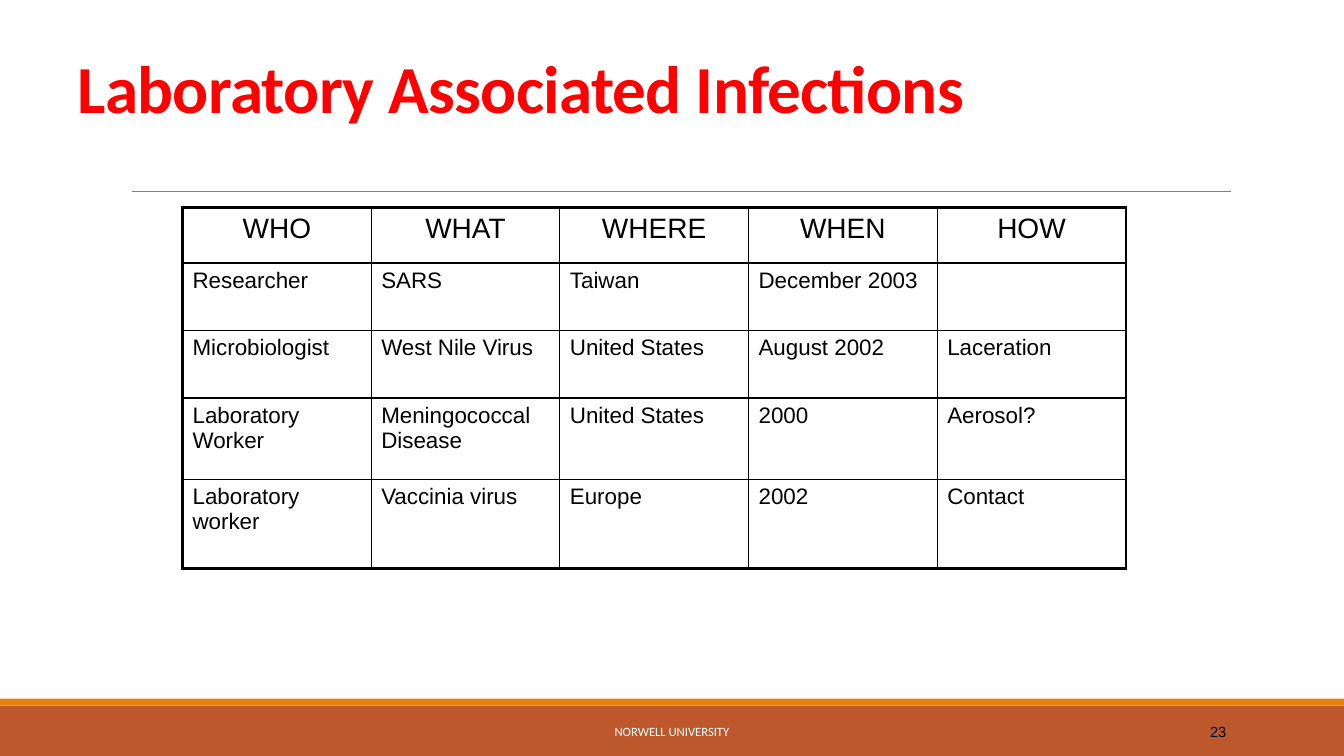
from lxml import etree
from pptx import Presentation
from pptx import util as u
from pptx.dml.color import RGBColor
from pptx.enum import shapes, text
from pptx.oxml.ns import qn

BLACK = RGBColor(0x00, 0x00, 0x00)
WHITE = RGBColor(0xFF, 0xFF, 0xFF)
RED = RGBColor(0xFF, 0x00, 0x00)
GREY = RGBColor(0x80, 0x80, 0x80)
RUST = RGBColor(0xBD, 0x58, 0x2C)
ORANGE = RGBColor(0xE4, 0x83, 0x12)

INFECTIONS = [
    ["WHO", "WHAT", "WHERE", "WHEN", "HOW"],
    ["Researcher", "SARS", "Taiwan", "December 2003", ""],
    ["Microbiologist", "West Nile Virus", "United States", "August 2002", "Laceration"],
    ["Laboratory Worker", "Meningococcal Disease", "United States", "2000", "Aerosol?"],
    ["Laboratory worker", "Vaccinia virus", "Europe", "2002", "Contact"],
]


class SlideBuilder:
    heading_font = "Calibri"
    body_font = "Arial"
    outer_border = 2.25
    inner_border = 1

    def __init__(self, presentation):
        self.width = presentation.slide_width
        self.height = presentation.slide_height
        self.slide = presentation.slides.add_slide(presentation.slide_layouts[6])

    def x(self, percent):
        return round(self.width * percent / 100)

    def y(self, percent):
        return round(self.height * percent / 100)

    def box(self, left, top, width, height):
        return self.x(left), self.y(top), self.x(width), self.y(height)

    def bar(self, area, color):
        shape = self.slide.shapes.add_shape(shapes.MSO_SHAPE.RECTANGLE, *self.box(*area))
        shape.shadow.inherit = False
        shape.fill.solid()
        shape.fill.fore_color.rgb = color
        shape.line.fill.background()

    def rule(self, left, right, top, color, weight):
        connector = self.slide.shapes.add_connector(
            shapes.MSO_CONNECTOR.STRAIGHT, self.x(left), self.y(top), self.x(right), self.y(top))
        connector.line.color.rgb = color
        connector.line.width = u.Pt(weight)
        etree.SubElement(connector._element.spPr, qn("a:effectLst"))

    def run(self, paragraph, wording, size, font, color, bold=False):
        run = paragraph.add_run()
        run.text = wording
        run.font.size = u.Pt(size)
        run.font.name = font
        run.font.bold = bold
        run.font.color.rgb = color
        return run

    def label(self, area, wording, size, font, color, align, bold=False, line_spacing=1, tracking=0):
        frame = self.slide.shapes.add_textbox(*self.box(*area)).text_frame
        frame.word_wrap = True
        frame.vertical_anchor = text.MSO_ANCHOR.MIDDLE
        paragraph = frame.paragraphs[0]
        paragraph.alignment = align
        paragraph.line_spacing = line_spacing
        run = self.run(paragraph, wording, size, font, color, bold)
        if tracking:
            run.font._element.set("spc", str(round(tracking * 100)))

    def borders(self, cell, weights):
        properties = cell._tc.get_or_add_tcPr()
        for position, (side, weight) in enumerate(weights.items()):
            line = etree.Element(qn(f"a:ln{side}"), w=str(u.Pt(weight)))
            fill = etree.SubElement(line, qn("a:solidFill"))
            etree.SubElement(fill, qn("a:srgbClr"), val=str(BLACK))
            properties.insert(position, line)

    def table(self, left, top, column_width, row_heights, rows):
        last_row, last_column = len(rows) - 1, len(rows[0]) - 1
        area = self.box(left, top, column_width * len(rows[0]), sum(row_heights))
        table = self.slide.shapes.add_table(len(rows), len(rows[0]), *area).table
        table.first_row = table.horz_banding = False
        for column in table.columns:
            column.width = self.x(column_width)
        for row, height in zip(table.rows, row_heights):
            row.height = self.y(height)
        for row_index, row in enumerate(rows):
            for column_index, wording in enumerate(row):
                cell = table.cell(row_index, column_index)
                cell.fill.background()
                edges = {"L": column_index == 0, "R": column_index == last_column,
                         "T": row_index == 0, "B": row_index == last_row}
                self.borders(cell, {side: self.outer_border if outer else self.inner_border
                                    for side, outer in edges.items()})
                paragraph = cell.text_frame.paragraphs[0]
                is_header = row_index == 0
                paragraph.alignment = text.PP_ALIGN.CENTER if is_header else text.PP_ALIGN.LEFT
                if wording:
                    self.run(paragraph, wording, 20 if is_header else 16, self.body_font, BLACK)


def main():
    presentation = Presentation()
    presentation.slide_width = u.Inches(13.33)
    presentation.slide_height = u.Inches(7.5)
    builder = SlideBuilder(presentation)
    builder.bar((0, 93.33, 100, 6.67), RUST)
    builder.bar((0, 92.4, 100, 0.93), ORANGE)
    builder.rule(9.83, 91.6, 25.3, GREY, 0.5)
    builder.label((5.03, 4, 90, 16.67), "Laboratory Associated Infections", 48,
                  builder.heading_font, RED, text.PP_ALIGN.LEFT,
                  bold=True, line_spacing=0.85, tracking=-0.5)
    builder.table(13.58, 27.47, 14.04, [7.33, 8.93, 8.93, 10.8, 11.73], INFECTIONS)
    builder.label((30.23, 94.13, 39.53, 5.33), "NORWELL UNIVERSITY", 9,
                  builder.heading_font, WHITE, text.PP_ALIGN.CENTER)
    builder.label((81.25, 94.13, 10.73, 5.33), "23", 10.5,
                  builder.body_font, BLACK, text.PP_ALIGN.RIGHT)
    presentation.save("out.pptx")


if __name__ == "__main__":
    main()
